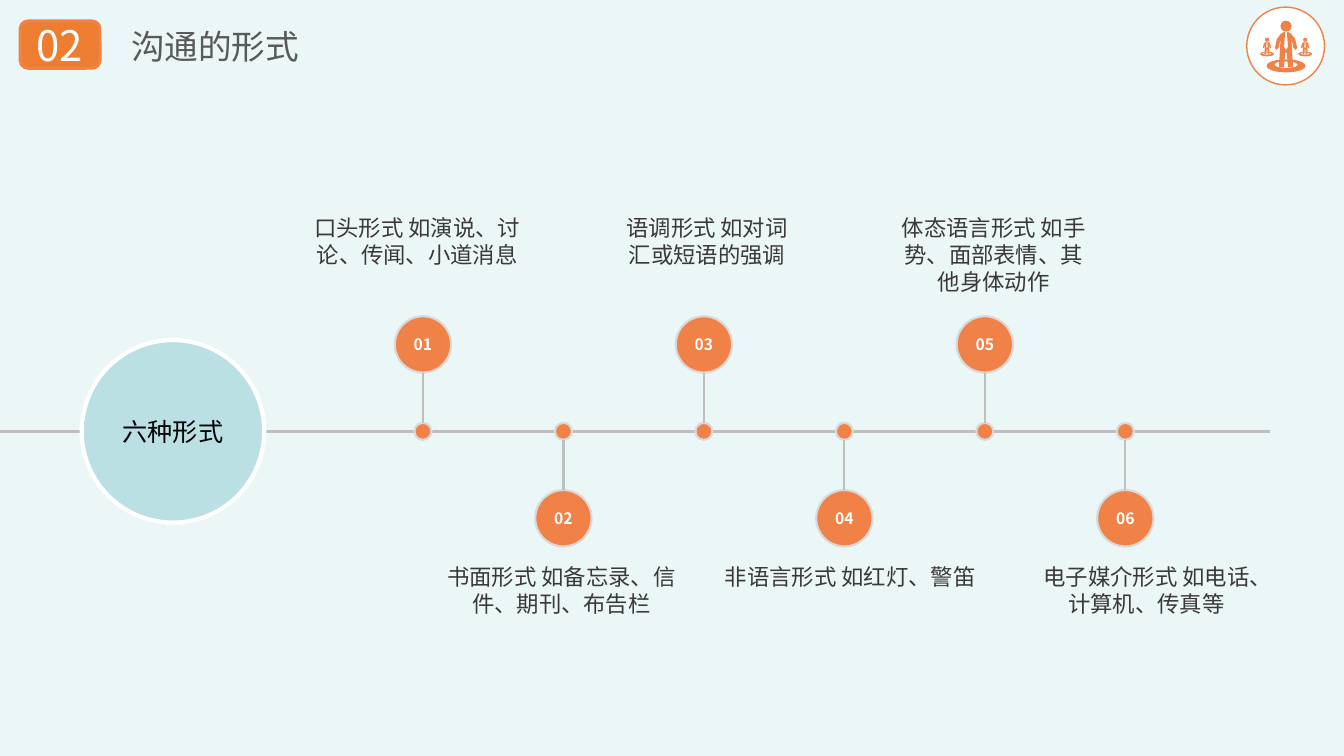
"""Builds a slide showing the six forms of communication along a timeline."""
from lxml.etree import SubElement
from pptx import Presentation
from pptx.dml.color import RGBColor
from pptx.enum.shapes import MSO_CONNECTOR, MSO_SHAPE
from pptx.enum.text import MSO_ANCHOR, MSO_AUTO_SIZE, PP_ALIGN
from pptx.oxml.ns import qn
from pptx.util import Cm, Pt

SECTION = "02"
TITLE = "沟通的形式"
HUB = "六种形式"
FORMS = [
    ("口头形式 如演说、讨论、传闻、小道消息", 7.57, 5.89),
    ("书面形式 如备忘录、信件、期刊、布告栏", 11.0, 6.3),
    ("语调形式 如对词汇或短语的强调", 15.52, 4.6),
    ("非语言形式 如红灯、警笛", 17.88, 6.96),
    ("体态语言形式 如手势、面部表情、其他身体动作", 22.38, 5.33),
    ("电子媒介形式 如电话、计算机、传真等", 26.01, 5.77),
]
ONE_LINE = 3
PEOPLE = [(32.41, 0.66, 1), (31.93, 1.0, 0.36), (32.89, 1.0, 0.36)]
HALF_BODY = [
    (0, 0.46), (0.05, 0.38), (0.02, 0), (0.1, 0.03), (0.15, 0.08), (0.23, 0.18),
    (0.28, 0.41), (0.24, 0.46), (0.19, 0.41), (0.14, 0.19), (0.15, 0.43),
    (0.18, 0.89), (0.05, 0.89), (0.02, 0.53),
]
COLORS = {
    "background": "EBF6F7", "orange": "F08247", "badge": "ED7D31", "hub": "BAE0E4",
    "line": "BFBFBF", "ring": "D9D9D9", "white": "FFFFFF", "black": "000000",
    "title": "595959", "body": "3B3838",
}
FONT = "Noto Sans CJK SC"
AXIS_Y, FIRST_X, STEP, RISE = 10.87, 10.66, 3.54, 2.19
NODE, DOT = 1.42, 0.43


def color(name):
    return RGBColor.from_string(COLORS[name])


def write(frame, text, size, ink, align=PP_ALIGN.CENTER, anchor=MSO_ANCHOR.TOP,
          bold=False, wrap=True):
    frame.word_wrap = wrap
    frame.auto_size = MSO_AUTO_SIZE.NONE
    frame.vertical_anchor = anchor
    paragraph = frame.paragraphs[0]
    paragraph.alignment = align
    run = paragraph.add_run()
    run.text = text
    run.font.size, run.font.bold, run.font.name = Pt(size), bold, FONT
    run.font.color.rgb = color(ink)
    SubElement(run.font._element, qn("a:ea")).set("typeface", FONT)


def paint(shape, fill, outline=None, width=0):
    shape.shadow.inherit = False
    shape.fill.solid()
    shape.fill.fore_color.rgb = color(fill)
    if outline:
        shape.line.color.rgb = color(outline)
        shape.line.width = Pt(width)
    else:
        shape.line.fill.background()
    return shape


def ellipse(slide, x, y, width, height, *style):
    shape = slide.shapes.add_shape(
        MSO_SHAPE.OVAL, Cm(x - width / 2), Cm(y - height / 2), Cm(width), Cm(height))
    return paint(shape, *style)


def label(slide, left, top, width, height, *args, **options):
    box = slide.shapes.add_textbox(Cm(left), Cm(top), Cm(width), Cm(height))
    write(box.text_frame, *args, **options)


def connect(slide, x1, y1, x2, y2, width):
    line = slide.shapes.add_connector(
        MSO_CONNECTOR.STRAIGHT, Cm(x1), Cm(y1), Cm(x2), Cm(y2))
    line.line.color.rgb = color("line")
    line.line.width = Pt(width)
    SubElement(line._element.spPr, qn("a:effectLst"))


def add_person(slide, x, head_y, scale):
    neck = head_y + 0.14 * scale
    base_y = neck + 0.86 * scale
    ellipse(slide, x, base_y, 0.98 * scale, 0.33 * scale, "orange")
    ellipse(slide, x, base_y - 0.03 * scale, 0.58 * scale, 0.16 * scale, "white")
    ellipse(slide, x, head_y, 0.28 * scale, 0.28 * scale, "orange")
    outline = HALF_BODY + [(-dx, dy) for dx, dy in reversed(HALF_BODY)]
    points = [(Cm(x + dx * scale), Cm(neck + dy * scale)) for dx, dy in outline]
    builder = slide.shapes.build_freeform(*points[0])
    builder.add_line_segments(points[1:])
    paint(builder.convert_to_shape(), "orange")


def add_header(slide):
    title = slide.shapes.title
    title.left, title.top, title.width, title.height = Cm(3.05), Cm(0.53), Cm(6.12), Cm(1.27)
    write(title.text_frame, TITLE, 24, "title", PP_ALIGN.LEFT)
    badge = slide.shapes.add_shape(
        MSO_SHAPE.ROUNDED_RECTANGLE, Cm(0.51), Cm(0.53), Cm(2.01), Cm(1.19))
    paint(badge, "badge", "orange", 2.25)
    label(slide, 0.25, 0.36, 2.51, 1.55, SECTION, 30, "white")
    ellipse(slide, 32.4, 1.16, 1.96, 1.96, "white", "orange", 1)
    for person in PEOPLE:
        add_person(slide, *person)


def add_timeline(slide):
    connect(slide, 0, AXIS_Y, 32, AXIS_Y, 1.75)
    hub = ellipse(slide, 4.36, AXIS_Y, 4.6, 4.6, "hub", "white", 3)
    write(hub.text_frame, HUB, 18, "black", anchor=MSO_ANCHOR.MIDDLE, wrap=False)
    for index, (form, left, width) in enumerate(FORMS):
        x = FIRST_X + index * STEP
        side = 1 if index % 2 else -1
        node_y = AXIS_Y + side * RISE
        ellipse(slide, x, AXIS_Y, DOT, DOT, "orange", "ring", 1.5)
        node = ellipse(slide, x, node_y, NODE, NODE, "orange", "ring", 1.5)
        frame = node.text_frame
        frame.margin_left = frame.margin_right = 0
        write(frame, f"{index + 1:02}", 11.2, "white", anchor=MSO_ANCHOR.MIDDLE, bold=True)
        connect(slide, x, AXIS_Y + side * DOT / 2, x, node_y - side * NODE / 2, 1.5)
        single = index == ONE_LINE
        label(slide, left, 14.07 if side > 0 else 5.28, width, 0.94 if single else 1.63,
              form, 16, "body", PP_ALIGN.RIGHT if single else PP_ALIGN.CENTER,
              wrap=not single)


def main():
    deck = Presentation()
    deck.slide_width, deck.slide_height = Cm(33.87), Cm(19.05)
    slide = deck.slides.add_slide(deck.slide_layouts[5])
    slide.background.fill.solid()
    slide.background.fill.fore_color.rgb = color("background")
    add_header(slide)
    add_timeline(slide)
    deck.save("out.pptx")


if __name__ == "__main__":
    main()
